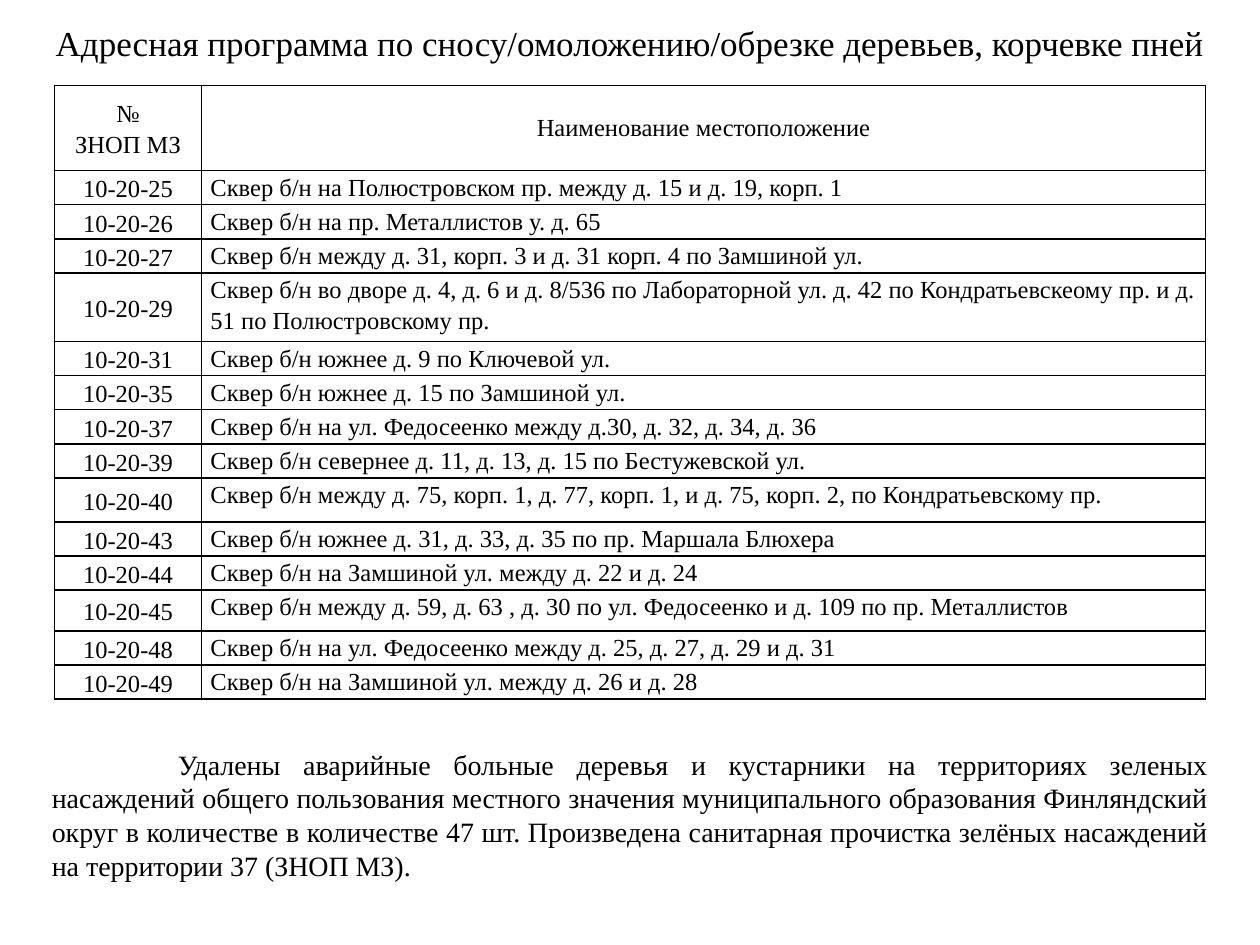
from dataclasses import dataclass

from lxml import etree
from pptx import Presentation
from pptx.dml.color import RGBColor
from pptx.enum.text import MSO_ANCHOR, MSO_AUTO_SIZE, PP_ALIGN
from pptx.oxml.ns import qn
from pptx.util import Pt

MID, TOP = MSO_ANCHOR.MIDDLE, MSO_ANCHOR.TOP
LEFT, CENTER, JUST = PP_ALIGN.LEFT, PP_ALIGN.CENTER, PP_ALIGN.JUSTIFY
FACE, BLACK = "Times New Roman", "000000"
LINE = 19.54  # height of a one-line row


@dataclass
class Place:
    code: str
    name: str
    high: float = LINE


PLACES = [
    Place("10-20-25", "Сквер б/н на Полюстровском пр. между д. 15 и д. 19, корп. 1"),
    Place("10-20-26", "Сквер б/н на пр. Металлистов у. д. 65"),
    Place("10-20-27", "Сквер б/н между д. 31, корп. 3 и д. 31 корп. 4 по Замшиной ул."),
    Place("10-20-29", "Сквер б/н во дворе д. 4, д. 6 и д. 8/536 по Лабораторной ул. д. 42 "
          "по Кондратьевскеому пр. и д. 51 по Полюстровскому пр.", 2 * LINE),
    Place("10-20-31", "Сквер б/н южнее д. 9 по Ключевой ул."),
    Place("10-20-35", "Сквер б/н южнее д. 15 по Замшиной ул."),
    Place("10-20-37", "Сквер б/н на ул. Федосеенко между д.30, д. 32, д. 34, д. 36"),
    Place("10-20-39", "Сквер б/н севернее д. 11, д. 13, д. 15 по Бестужевской ул."),
    Place("10-20-40", "Сквер б/н между д. 75, корп. 1, д. 77, корп. 1, и д. 75, корп. 2, "
          "по Кондратьевскому пр.", 25),
    Place("10-20-43", "Сквер б/н южнее д. 31, д. 33, д. 35 по пр. Маршала Блюхера"),
    Place("10-20-44", "Сквер б/н на Замшиной ул. между д. 22 и д. 24"),
    Place("10-20-45", "Сквер б/н между д. 59, д. 63 , д. 30 по ул. Федосеенко и д. 109 "
          "по пр. Металлистов", 23.3),
    Place("10-20-48", "Сквер б/н на ул. Федосеенко между д. 25, д. 27, д. 29 и д. 31"),
    Place("10-20-49", "Сквер б/н на Замшиной ул. между д. 26 и д. 28"),
]
NOTE = ("Удалены аварийные больные деревья и кустарники на территориях зеленых насаждений "
        "общего пользования местного значения муниципального образования Финляндский округ "
        "в количестве в количестве 47 шт. Произведена санитарная прочистка зелёных насаждений "
        "на территории 37 (ЗНОП МЗ).")


def set_all(obj, form: dict) -> None:
    for key, val in form.items():
        setattr(obj, key, val)


def paint(obj, tone: str) -> None:
    obj.rgb = RGBColor.from_string(tone)


def write(frame, text: str, size: float, form: dict) -> None:
    frame.text = text
    for para in frame.paragraphs:
        set_all(para, form)
        for run in para.runs:
            set_all(run.font, {"name": FACE, "size": Pt(size), "bold": False})
            paint(run.font.color, BLACK)


def edge(cell) -> None:
    props = cell._tc.get_or_add_tcPr()
    for side in ("lnL", "lnR", "lnT", "lnB"):
        line = etree.SubElement(props, qn(f"a:{side}"), w=str(Pt(1)))
        fill = etree.SubElement(line, qn("a:solidFill"))
        etree.SubElement(fill, qn("a:srgbClr"), val=BLACK)


def fill_cell(cell, text: str, anchor, form: dict) -> None:
    set_all(cell, {"margin_left": Pt(5), "margin_right": Pt(5), "margin_top": 0,
                   "margin_bottom": 0, "vertical_anchor": anchor})
    edge(cell)
    cell.fill.background()
    write(cell.text_frame, text, 14, form)


def box(left: float, top: float, width: float, height: float) -> dict:
    return {"left": Pt(left), "top": Pt(top), "width": Pt(width), "height": Pt(height)}


def main() -> None:
    deck = Presentation()
    set_all(deck, {"slide_width": Pt(720), "slide_height": Pt(540)})
    slide = deck.slides.add_slide(deck.slide_layouts[5])

    # Title
    title = slide.shapes.title
    set_all(title, box(0, 0, 720, 49))
    title.text_frame.vertical_anchor = MID
    write(title.text_frame,
          "Адресная программа по сносу/омоложению/обрезке деревьев, корчевке пней",
          20, {"alignment": CENTER})

    # Table of places
    rows = [Place("№\nЗНОП МЗ", "Наименование местоположение", 48.6)] + PLACES
    high = sum(row.high for row in rows)
    grid = slide.shapes.add_table(len(rows), 2, **box(31.1, 48.8, 657.8, high)).table
    set_all(grid, {"first_row": False, "horz_banding": False})
    for col, width in zip(grid.columns, (84.2, 573.6)):
        col.width = Pt(width)
    for num, row in enumerate(rows):
        grid.rows[num].height = Pt(row.high)
        fill_cell(grid.cell(num, 0), row.code, MID,
                  {"alignment": CENTER, "line_spacing": 1.15})
        if num == 0:
            fill_cell(grid.cell(num, 1), row.name, MID,
                      {"alignment": CENTER, "space_after": Pt(2.5)})
        else:
            fill_cell(grid.cell(num, 1), row.name, TOP,
                      {"alignment": LEFT, "line_spacing": 1.15})

    # Summary under the table
    note = slide.shapes.add_textbox(**box(22.5, 423.5, 675, 104.5)).text_frame
    set_all(note, {"word_wrap": True, "auto_size": MSO_AUTO_SIZE.SHAPE_TO_FIT_TEXT})
    write(note, NOTE, 16, {"alignment": JUST})
    note.paragraphs[0]._p.get_or_add_pPr().set("indent", str(Pt(72)))

    deck.save("out.pptx")


if __name__ == "__main__":
    main()
